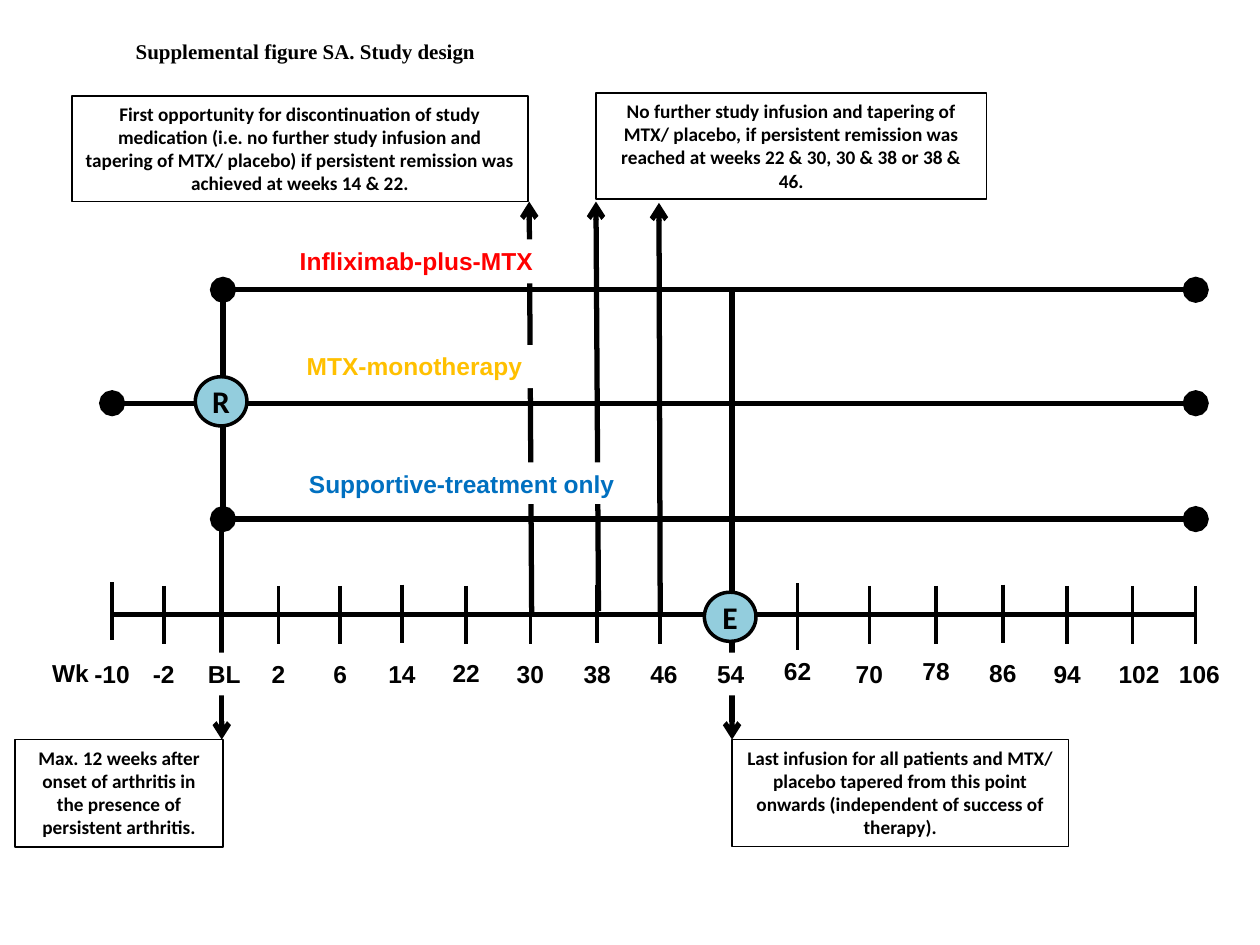
from lxml import etree
from pptx import Presentation
from pptx.dml.color import RGBColor
from pptx.enum import shapes, text
from pptx.oxml import ns
from pptx.util import Inches, Pt

BLACK = RGBColor(0x00, 0x00, 0x00)
WHITE = RGBColor(0xFF, 0xFF, 0xFF)
RED = RGBColor(0xFF, 0x00, 0x00)
AMBER = RGBColor(0xFF, 0xC0, 0x00)
BLUE = RGBColor(0x00, 0x70, 0xC0)
AQUA = RGBColor(0x93, 0xCD, 0xDD)

AXIS_START, AXIS_END, AXIS_Y = 0.89, 9.49, 4.88
BASELINE_X, WEEK_54_X = 1.77, 5.81
TICK_LENGTH = 0.46
LABEL_HEIGHT = 0.34

# week, tick x, tick top
TICKS = [
    ("-10", 0.89, 4.62), ("-2", 1.3, 4.65), ("2", 2.21, 4.65), ("6", 2.7, 4.65),
    ("14", 3.19, 4.64), ("22", 3.7, 4.65), ("30", 4.21, 4.65), ("38", 4.74, 4.64),
    ("46", 5.24, 4.65), ("62", 6.33, 4.63), ("70", 6.9, 4.65), ("78", 7.43, 4.65),
    ("86", 7.96, 4.64), ("94", 8.47, 4.65), ("102", 8.99, 4.65), ("106", 9.49, 4.65),
]
LABEL_SHIFTS = {"46": 0.03, "102": 0.05, "106": 0.03}
LABEL_TOPS = {"22": 5.17, "62": 5.16, "78": 5.16, "86": 5.17}
LABEL_TOP = 5.18

# name, colour, line start, line y, label left, top, width, height
ARMS = [
    ("Infliximab-plus-MTX", RED, BASELINE_X, 2.3, 2.02, 1.9, 2.57, 0.35),
    ("MTX-monotherapy", AMBER, AXIS_START, 3.2, 1.99, 2.74, 2.6, 0.34),
    ("Supportive-treatment only", BLUE, BASELINE_X, 4.12, 2.22, 3.67, 2.89, 0.33),
]

# start x, start y, end x, end y
ARROWS = [
    (4.22, 4.89, 4.2, 1.6),
    (4.75, 4.85, 4.73, 1.6),
    (5.24, 4.86, 5.23, 1.61),
    (1.76, 4.13, 1.76, 5.87),
    (WEEK_54_X, 2.29, WEEK_54_X, 5.87),
]

# text, left, top, width, height, border
NOTES = [
    ("First opportunity for discontinuation of study medication (i.e. no further "
     "study infusion and tapering of MTX/ placebo) if persistent remission was "
     "achieved at weeks 14 & 22.", 0.57, 0.76, 3.62, 0.84, 1),
    ("No further study infusion and tapering of MTX/ placebo, if persistent "
     "remission was reached at weeks 22 & 30, 30 & 38 or 38 & 46.",
     4.73, 0.74, 3.1, 0.84, 1),
    ("Max. 12 weeks after onset of arthritis in the presence of persistent "
     "arthritis.", 0.12, 5.87, 1.65, 0.85, 1),
    ("Last infusion for all patients and MTX/ placebo tapered from this point "
     "onwards (independent of success of therapy).",
     5.81, 5.87, 2.67, 0.85, 0.75),
]


def add_line(slide, x1, y1, x2, y2, width=3, head=None, tail=None, size="med"):
    line = slide.shapes.add_connector(
        shapes.MSO_CONNECTOR.STRAIGHT, Inches(x1), Inches(y1), Inches(x2), Inches(y2))
    line.line.color.rgb = BLACK
    line.line.width = Pt(width)
    ln = line.line._get_or_add_ln()
    for tag, kind in (("a:headEnd", head), ("a:tailEnd", tail)):
        if kind:
            etree.SubElement(ln, ns.qn(tag), type=kind, w=size, len=size)
    etree.SubElement(line._element.spPr, ns.qn("a:effectLst"))


def write(sp, words, size, font, color=BLACK, wrap=True):
    """Put one bold centred paragraph into a shape."""
    tf = sp.text_frame
    tf.word_wrap = wrap
    p = tf.paragraphs[0]
    p.text = words
    p.alignment = text.PP_ALIGN.CENTER
    p.font.size = Pt(size)
    p.font.name = font
    p.font.bold = True
    p.font.color.rgb = color


def add_text(slide, words, left, top, width, height, size=14, font="Arial"):
    sp = slide.shapes.add_textbox(
        Inches(left), Inches(top), Inches(width), Inches(height))
    write(sp, words, size, font, wrap=False)


def add_box(slide, left, top, width, height, fill=None, border=0,
            kind=shapes.MSO_SHAPE.RECTANGLE, anchor=text.MSO_ANCHOR.TOP):
    sp = slide.shapes.add_shape(
        kind, Inches(left), Inches(top), Inches(width), Inches(height))
    sp.shadow.inherit = False
    if fill is None:
        sp.fill.background()
    else:
        sp.fill.solid()
        sp.fill.fore_color.rgb = fill
    if border:
        sp.line.color.rgb = BLACK
        sp.line.width = Pt(border)
    else:
        sp.line.fill.background()
    sp.text_frame.vertical_anchor = anchor
    return sp


def add_milestone(slide, letter, left, top):
    sp = add_box(slide, left, top, 0.41, 0.39, AQUA, 2,
                 shapes.MSO_SHAPE.OVAL, text.MSO_ANCHOR.MIDDLE)
    write(sp, letter, 18, "Calibri", wrap=False)


def add_week_axis(slide):
    add_line(slide, AXIS_START, AXIS_Y, AXIS_END, AXIS_Y)
    add_text(slide, "Wk", 0.31, 5.17, 0.5, LABEL_HEIGHT)
    for week, x, top in TICKS:
        length = 0.53 if week == "62" else TICK_LENGTH
        add_line(slide, x, top, x, top + length, width=2)
        center = x + LABEL_SHIFTS.get(week, 0)
        width = 0.6 if len(week) == 3 else 0.5
        add_text(slide, week, center - width / 2, LABEL_TOPS.get(week, LABEL_TOP),
                 width, LABEL_HEIGHT)


def main():
    prs = Presentation()
    prs.slide_width, prs.slide_height = Inches(10), Inches(7.5)
    slide = prs.slides.add_slide(prs.slide_layouts[6])

    add_text(slide, "Supplemental figure SA. Study design", -0.29, 0.26, 5.43, 0.3,
             12, "Times New Roman")
    add_week_axis(slide)
    add_line(slide, BASELINE_X, 2.3, BASELINE_X, 4.12)
    for arrow in ARROWS:
        add_line(slide, *arrow, tail="arrow")
    for _, _, start, y, *_ in ARMS:
        add_line(slide, start, y, AXIS_END, y, head="oval", tail="oval", size="lg")

    for name, color, _, _, *place in ARMS:
        write(add_box(slide, *place, fill=WHITE), name, 14, "Arial", color)
    for week, left in (("BL", 1.53), ("54", 5.55)):
        sp = add_box(slide, left, LABEL_TOP, 0.5, LABEL_HEIGHT, WHITE)
        write(sp, week, 14, "Arial", wrap=False)
    for words, *place, border in NOTES:
        write(add_box(slide, *place, border=border), words, 11, "Calibri")

    add_milestone(slide, "R", 1.55, 2.99)
    add_milestone(slide, "E", 5.59, 4.7)
    prs.save("out.pptx")


if __name__ == "__main__":
    main()
